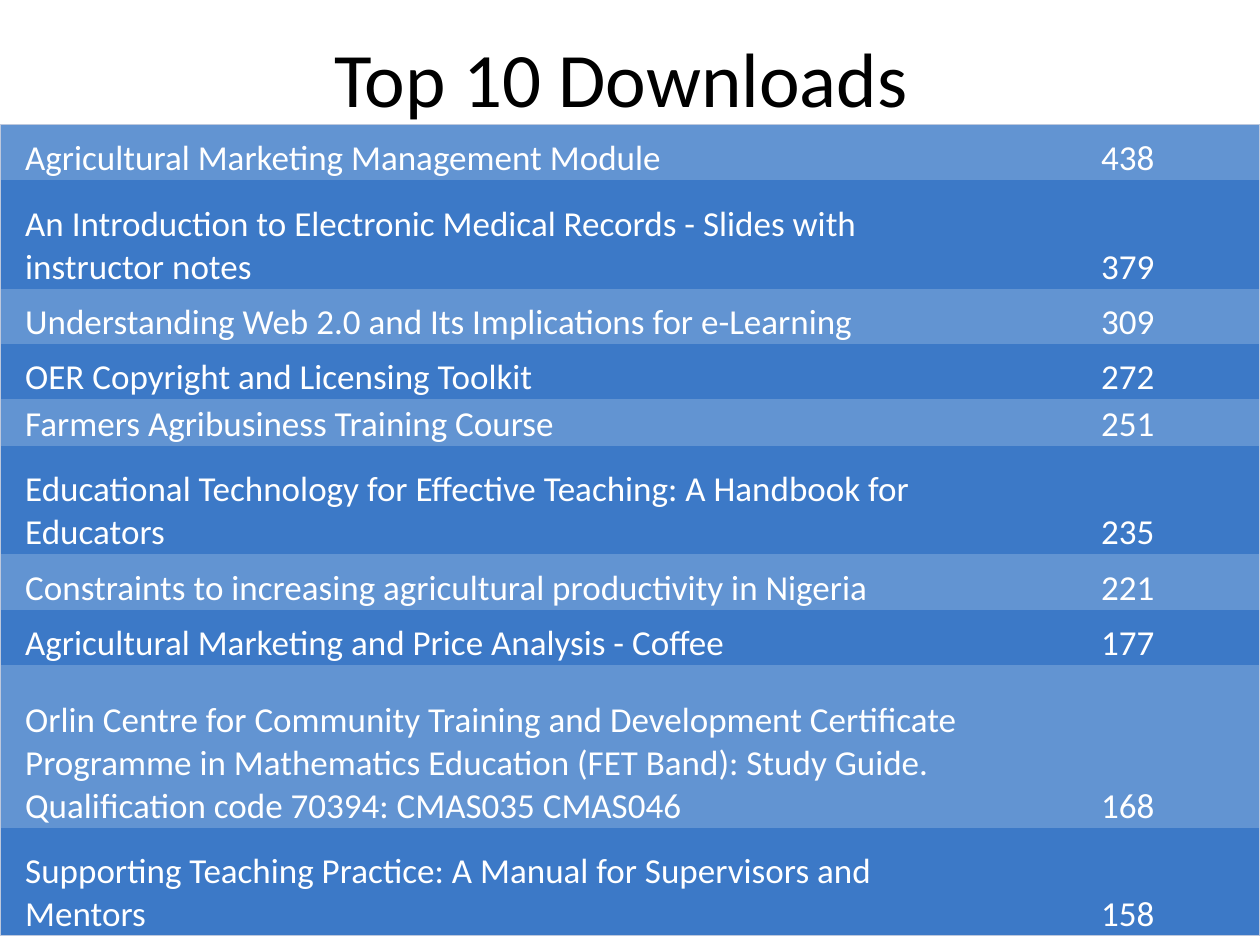
import lxml.etree
import pptx
import pptx.dml.color
import pptx.enum.text
import pptx.oxml.ns
import pptx.util

Inches = pptx.util.Inches
Pt = pptx.util.Pt
qn = pptx.oxml.ns.qn
ALIGN = pptx.enum.text.PP_ALIGN
ANCHOR = pptx.enum.text.MSO_ANCHOR

TITLE = "Top 10 Downloads"
# Resource, downloads, row height in inches
DOWNLOADS = [
    ("Agricultural Marketing Management Module", 438, 0.44),
    ("An Introduction to Electronic Medical Records - Slides with instructor notes", 379, 0.86),
    ("Understanding Web 2.0 and Its Implications for e-Learning", 309, 0.44),
    ("OER Copyright and Licensing Toolkit", 272, 0.44),
    ("Farmers Agribusiness Training Course", 251, 0.37),
    ("Educational Technology for Effective Teaching: A Handbook for Educators", 235, 0.86),
    ("Constraints to increasing agricultural productivity in Nigeria", 221, 0.44),
    ("Agricultural Marketing and Price Analysis - Coffee", 177, 0.44),
    ("Orlin Centre for Community Training and Development Certificate Programme in "
     "Mathematics Education (FET Band): Study Guide. Qualification code 70394: "
     "CMAS035 CMAS046", 168, 1.29),
    ("Supporting Teaching Practice: A Manual for Supervisors and Mentors", 158, 0.86),
]
COLUMN_WIDTHS = [7.9, 2.1]
COLORS = {"title": "000000", "text": "FFFFFF", "light": "6294D2",
          "dark": "3C79C7", "border": "BDC8DD"}
FONT = "Calibri"
PLAIN_STYLE = "{2D5ABB26-0587-4C30-8999-92F81FD0307C}"


def rgb(name):
    return pptx.dml.color.RGBColor.from_string(COLORS[name])


def format_paragraph(paragraph, size, color, alignment):
    paragraph.alignment = alignment
    for run in paragraph.runs:
        run.font.name = FONT
        run.font.size = Pt(size)
        run.font.color.rgb = rgb(color)


def add_border(cell, side):
    """Draw one cell edge; side is L, R, T or B, added in that order."""
    properties = cell._tc.get_or_add_tcPr()
    line = lxml.etree.SubElement(properties, qn(f"a:ln{side}"), w=str(Pt(0.75)))
    fill = lxml.etree.SubElement(line, qn("a:solidFill"))
    lxml.etree.SubElement(fill, qn("a:srgbClr"), val=COLORS["border"])


def fill_cell(cell, text, alignment, band, sides):
    cell.text_frame.text = text
    cell.vertical_anchor = ANCHOR.BOTTOM
    cell.margin_left = cell.margin_right = cell.margin_top = Inches(0.01)
    cell.margin_bottom = 0
    paragraph = cell.text_frame.paragraphs[0]
    paragraph.space_after = Pt(6)
    format_paragraph(paragraph, 20, "text", alignment)
    if alignment == ALIGN.LEFT:
        properties = paragraph._p.get_or_add_pPr()
        properties.set("marL", str(Inches(0.19)))
        properties.set("indent", "0")
    for side in sides:
        add_border(cell, side)
    cell.fill.solid()
    cell.fill.fore_color.rgb = rgb(band)


def add_title(slide):
    title = slide.shapes.title
    title.left, title.top = Inches(0.43), Inches(-0.02)
    title.width, title.height = Inches(9), Inches(1.25)
    title.text_frame.text = TITLE
    title.text_frame.vertical_anchor = ANCHOR.MIDDLE
    format_paragraph(title.text_frame.paragraphs[0], 44, "title", ALIGN.CENTER)


def add_downloads(slide):
    height = sum(row_height for _, _, row_height in DOWNLOADS)
    table = slide.shapes.add_table(
        len(DOWNLOADS), len(COLUMN_WIDTHS), Inches(0), Inches(0.99),
        Inches(sum(COLUMN_WIDTHS)), Inches(height)).table
    table.first_row = table.horz_banding = False
    table._tbl.tblPr.find(qn("a:tableStyleId")).text = PLAIN_STYLE
    for column, width in zip(table.columns, COLUMN_WIDTHS):
        column.width = Inches(width)
    last = len(DOWNLOADS) - 1
    for index, (resource, count, row_height) in enumerate(DOWNLOADS):
        table.rows[index].height = Inches(row_height)
        band = "dark" if index % 2 else "light"
        edges = ("T" if index == 0 else "") + ("B" if index == last else "")
        fill_cell(table.cell(index, 0), resource, ALIGN.LEFT, band, "L" + edges)
        fill_cell(table.cell(index, 1), str(count), ALIGN.CENTER, band, "R" + edges)


def main():
    presentation = pptx.Presentation()
    presentation.slide_width, presentation.slide_height = Inches(10), Inches(7.5)
    slide = presentation.slides.add_slide(presentation.slide_layouts[5])
    add_title(slide)
    add_downloads(slide)
    presentation.save("out.pptx")


if __name__ == "__main__":
    main()
